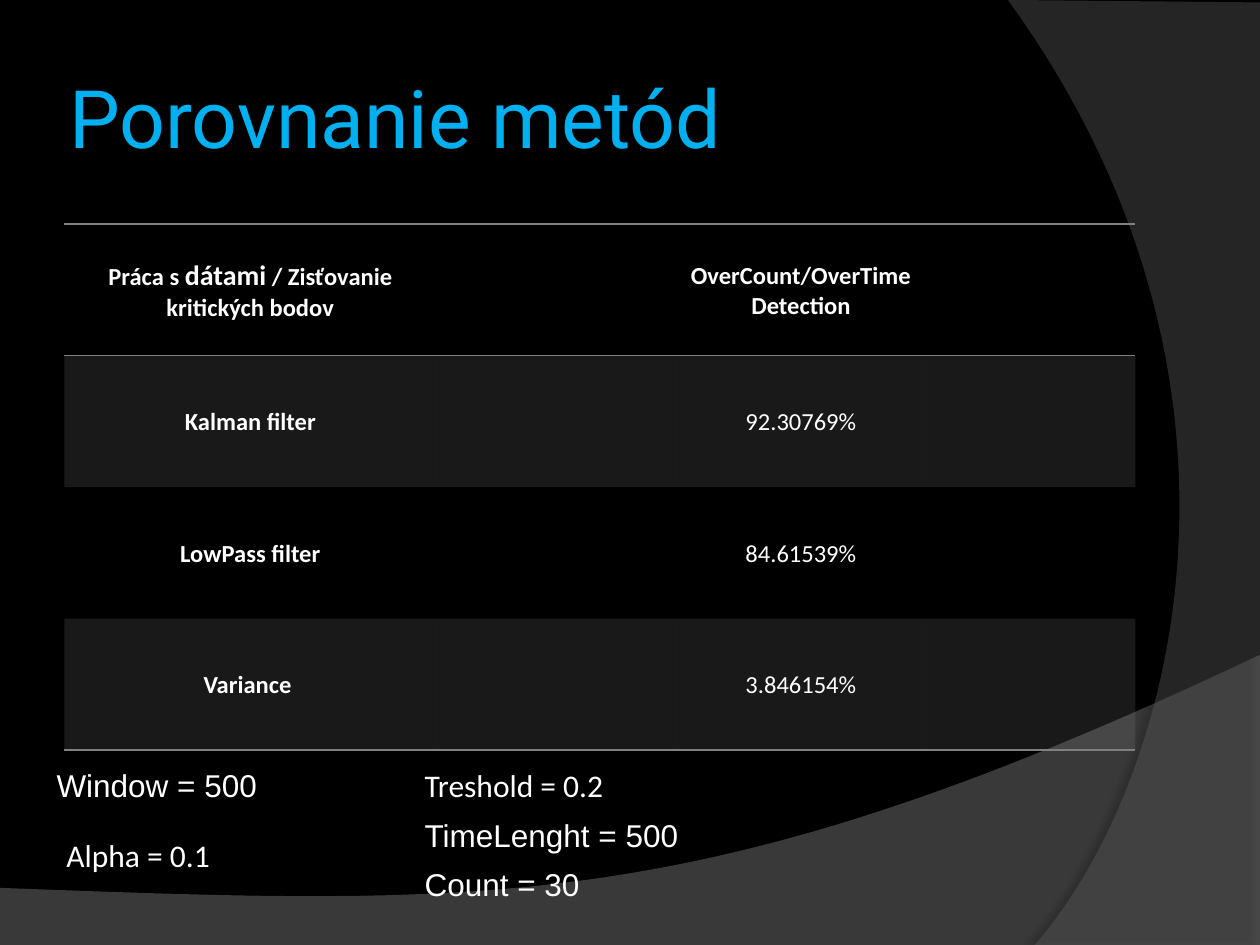
from dataclasses import dataclass

from lxml import etree
from pptx import Presentation
from pptx.dml.color import RGBColor
from pptx.enum import text
from pptx.oxml import ns
from pptx.util import Cm, Pt


@dataclass(frozen=True)
class Theme:
    """Colours, fonts and type sizes of the slide."""
    back: str = "000000"
    ink: str = "FFFFFF"
    accent: str = "00B0F0"
    rule: str = "808080"
    wave: str = "7F7F7F"
    arc: str = "5E5E5E"
    title_font: str = "Roboto"
    body: str = "Calibri"
    note: str = "Arial"
    title_size: int = 46
    note_size: int = 18
    cell_size: int = 14
    large_size: int = 16


T = Theme()
NO_GRID = "{2D5ABB26-0587-4C30-8999-92F81FD0307C}"


def rgb(value):
    """Turn a hex string into a colour."""
    return RGBColor.from_string(value)


def sub(parent, tag, **attrs):
    """Append a drawing element with the given attributes."""
    return etree.SubElement(parent, ns.qn(tag), {k: str(v) for k, v in attrs.items()})


def set_fill(fill, holder, color, alpha):
    """Give a shape or cell a translucent solid fill."""
    fill.solid()
    fill.fore_color.rgb = rgb(color)
    sub(holder.find(ns.qn("a:solidFill"))[0], "a:alpha", val=alpha * 1000)


def set_font(font, name, size, color, bold=False):
    """Set the usual font properties."""
    font.name, font.size, font.bold = name, Pt(size), bold
    font.color.rgb = rgb(color)


def bezier(a, b, c, d, steps=60):
    """Return points along a cubic curve, without its start."""
    points = []
    for i in range(1, steps + 1):
        t = i / steps
        w = ((1 - t) ** 3, 3 * t * (1 - t) ** 2, 3 * t * t * (1 - t), t ** 3)
        points.append(tuple(sum(k * p[n] for k, p in zip(w, (a, b, c, d))) for n in (0, 1)))
    return points


def add_sweep(slide, points, color, alpha, shade, blur, dist, angle):
    """Draw one translucent background sweep with a soft shadow."""
    start, *rest = [(Cm(x), Cm(y)) for x, y in points]
    builder = slide.shapes.build_freeform(*start)
    builder.add_line_segments(rest, close=True)
    sp = builder.convert_to_shape()
    sp.line.fill.background()
    sp.shadow.inherit = False
    pr = sp._element.spPr
    set_fill(sp.fill, pr, color, alpha)
    shadow = sub(pr.find(ns.qn("a:effectLst")), "a:outerShdw", blurRad=Pt(blur),
                 dist=Pt(dist), dir=angle * 60000, algn="ctr", rotWithShape=0)
    sub(sub(shadow, "a:srgbClr", val=T.back), "a:alpha", val=shade * 1000)


def add_background(slide, width, height):
    """Paint the dark ground and its two sweeps."""
    slide.background.fill.solid()
    slide.background.fill.fore_color.rgb = rgb(T.back)
    crest, foot = (width, 13.2), (0, 17.9)
    wave = [foot, (0, height), (width, height), crest]
    wave += bezier(crest, (14.2, 18.52), (9.93, 18.26), foot)
    add_sweep(slide, wave, T.wave, 45, 35, 4, 3.5, 270)
    low, top = (20.86, height), (20.32, 0)
    arc = [(width, 0.05), (width, height), low]
    arc += bezier(low, (23.75, 15.72), (25.86, 7.62), top)
    add_sweep(slide, arc, T.arc, 40, 45, 4, 4, 180)


def add_text(slide, left, top, width, height, words, font, size, color, wrap=True):
    """Place one line of text and return its frame."""
    tf = slide.shapes.add_textbox(Cm(left), Cm(top), Cm(width), Cm(height)).text_frame
    tf.word_wrap = wrap
    p = tf.paragraphs[0]
    p.text = words
    set_font(p.font, font, size, color)
    return tf


def add_title(slide, left, top, width, height):
    """Place the slide title."""
    tf = add_text(slide, left, top, width, height, "Porovnanie metód",
                  T.title_font, T.title_size, T.accent)
    tf.vertical_anchor = text.MSO_ANCHOR.MIDDLE
    tf.margin_left = tf.margin_right = Cm(0.13)


def add_rules(cell, sides):
    """Draw thin rules on the named sides of a cell."""
    pr = cell._tc.get_or_add_tcPr()
    for i, side in enumerate(sides):
        line = sub(pr, f"a:ln{side}", w=Pt(1))
        sub(sub(line, "a:solidFill"), "a:srgbClr", val=T.rule)
        pr.insert(i, line)


def add_cell_text(cell, runs, bold):
    """Centre the text runs, each with its size, in a cell."""
    cell.vertical_anchor = text.MSO_ANCHOR.MIDDLE
    cell.margin_left = cell.margin_right = cell.margin_top = Cm(0.03)
    cell.margin_bottom = 0
    p = cell.text_frame.paragraphs[0]
    p.alignment = text.PP_ALIGN.CENTER
    for words, size in runs:
        r = p.add_run()
        r.text = words
        set_font(r.font, T.body, size, T.ink, bold)


def add_results(slide, left, top, width, height):
    """Build the table that compares the methods."""
    small = T.cell_size
    rows = [
        ([("Práca s ", small), ("dátami", T.large_size),
          (" / Zisťovanie kritických bodov", small)],
         [("OverCount/OverTime Detection", small)]),
    ]
    rows += [([(name, small)], [(value, small)]) for name, value in (
        ("Kalman filter", "92.30769%"),
        ("LowPass filter", "84.61539%"),
        ("Variance ", "3.846154%"))]
    shares = (2.95, 1.91, 1.97, 1.67)
    table = slide.shapes.add_table(len(rows), len(shares), Cm(left), Cm(top),
                                   Cm(width), Cm(height)).table
    table.first_row = table.horz_banding = False
    table._tbl.tblPr.find(ns.qn("a:tableStyleId")).text = NO_GRID
    for column, share in zip(table.columns, shares):
        column.width = Cm(width * share / sum(shares))
    for i, row in enumerate(rows):
        sides = {0: "TB", len(rows) - 1: "B"}.get(i, "")
        for j in range(len(shares)):
            cell = table.cell(i, j)
            if i % 2:
                set_fill(cell.fill, cell._tc.get_or_add_tcPr(), T.rule, 20)
            else:
                cell.fill.background()
            add_rules(cell, sides)
            if j % 2 == 0:
                add_cell_text(cell, row[j // 2], i == 0 or j == 0)


def add_parameters(slide, left, top):
    """List the parameters below the table in two columns."""
    second = left + 7.42
    for x, y, width, words, font, wrap in (
            (left, 0, 4.6, "Window = 500", T.note, False),
            (left + 0.2, 1.4, 6.6, "Alpha = 0.1", T.body, True),
            (second, 0, 4.3, "Treshold = 0.2", T.body, False),
            (second, 1, 6.4, "TimeLenght = 500", T.note, True),
            (second, 2, 4.8, "Count = 30", T.note, True)):
        add_text(slide, x, top + y, width, 1.02, words, font, T.note_size, T.ink, wrap)


def main():
    """Build and save the slide."""
    prs = Presentation()
    prs.slide_width, prs.slide_height = Cm(25.4), Cm(19.05)
    slide = prs.slides.add_slide(prs.slide_layouts[6])
    add_background(slide, 25.4, 19.05)
    add_results(slide, 1.3, 4.52, 21.59, 10.6)
    add_parameters(slide, 0.89, 15.32)
    add_title(slide, 1.27, 0.76, 20.75, 3.18)
    prs.save("out.pptx")


if __name__ == "__main__":
    main()
